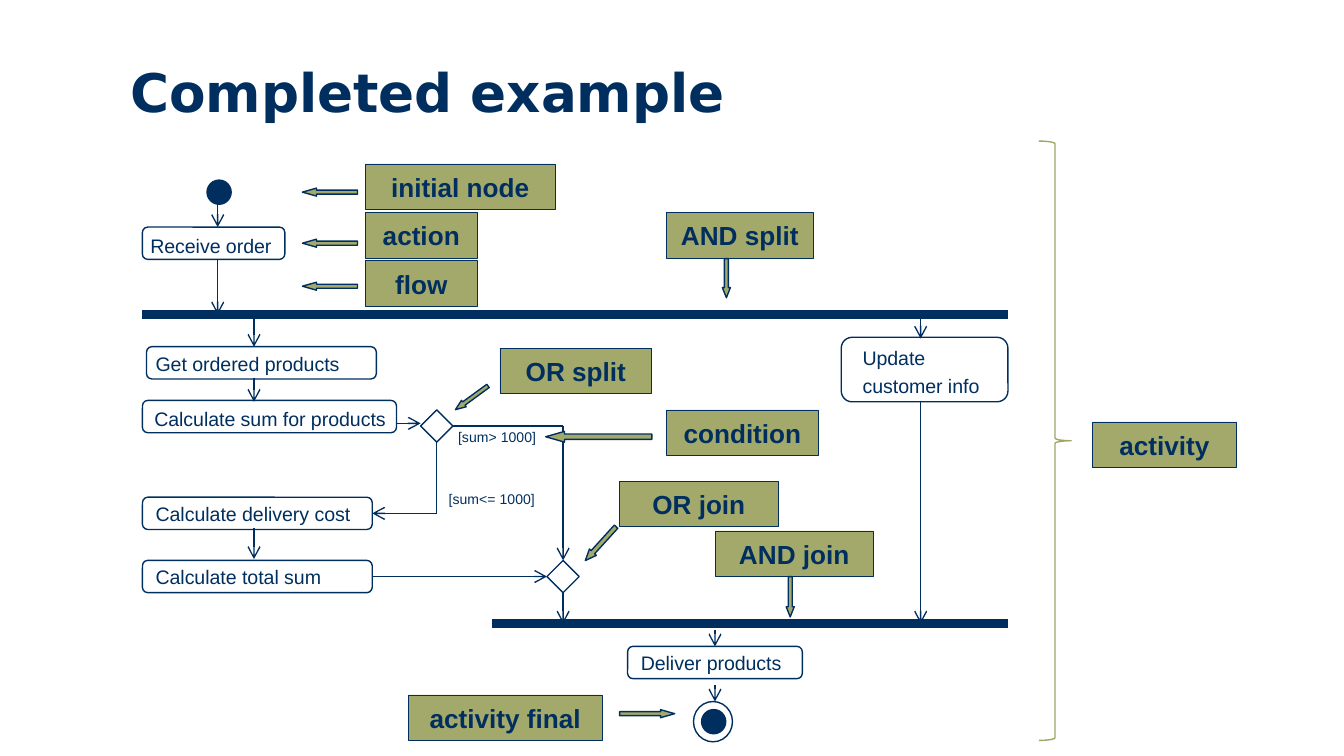
from lxml.etree import SubElement
from pptx import Presentation
from pptx.dml.color import RGBColor
from pptx.enum.shapes import MSO_CONNECTOR, MSO_SHAPE as Shape
from pptx.enum.text import MSO_ANCHOR as Anchor, PP_ALIGN as Align
from pptx.oxml.ns import qn
from pptx.util import Inches, Pt

NAVY, OLIVE, BRACE, WHITE = "002F5F", "A3A86B", "A1A667", "FFFFFF"
TOP, LEFT, BOTTOM, RIGHT = range(4)

TITLE = "Completed example"

# Actions: lines, box (left, top, width, height), text (left, top, width), line spacing
ACTIONS = {
    "receive": (["Receive order"], (1.06, 1.69, 1.06, 0.24), (1.02, 1.75, 1.18), 0.6),
    "get": (["Get ordered products"], (1.09, 2.58, 1.71, 0.24), (1.06, 2.6, 1.77), 0.8),
    "sum": (["Calculate sum for products"], (1.06, 2.98, 1.89, 0.24), (1.05, 3.01, 2.24), 0.8),
    "delivery": (["Calculate delivery cost"], (1.06, 3.7, 1.71, 0.24), (1.06, 3.72, 1.71), 0.8),
    "total": (["Calculate total sum"], (1.06, 4.17, 1.71, 0.24), (1.06, 4.19, 1.7), 0.8),
    "update": (["Update", "customer info"], (6.26, 2.51, 1.24, 0.48), (6.32, 2.59, 1.24), 0.6),
    "deliver": (["Deliver products"], (4.67, 4.81, 1.3, 0.24), (4.67, 4.83, 1.3), 0.8),
}
DIAMONDS = {"or split": (3.13, 3.05, 0.24, 0.24), "or join": (4.07, 4.17, 0.24, 0.24)}
CONDITIONS = [("[sum> 1000]", (3.31, 3.14, 0.78, 0.23)),
              ("[sum<= 1000]", (3.24, 3.6, 0.84, 0.23))]
INITIAL_NODE = (1.54, 1.34, 0.18, 0.18)
FINAL_DOT, FINAL_RING = (5.22, 5.28, 0.18, 0.18), (5.16, 5.22, 0.29, 0.3)

# AND bars: left, right, y
BARS = [(1.06, 7.5, 2.34), (3.66, 7.5, 4.64)]

# Flows: start, end, arrowhead, joined start node, joined end node
FLOWS = [
    ((1.62, 1.51), (1.62, 1.69), True, None, None),
    ((1.62, 1.93), (1.62, 2.34), True, None, None),
    ((1.89, 2.34), (1.89, 2.58), True, None, None),
    ((1.89, 2.81), (1.89, 2.99), True, None, None),
    ((1.89, 3.93), (1.89, 4.16), True, None, None),
    ((6.85, 2.34), (6.85, 2.52), True, None, None),
    ((6.85, 2.99), (6.85, 4.64), True, None, None),
    ((2.95, 3.15), (3.13, 3.15), True, None, None),
    ((3.37, 3.17), (4.19, 3.17), False, ("or split", RIGHT), None),
    ((4.19, 3.17), (4.19, 4.17), True, None, ("or join", TOP)),
    ((3.25, 3.29), (3.25, 3.82), False, ("or split", BOTTOM), None),
    ((3.25, 3.82), (2.77, 3.82), True, None, ("delivery", RIGHT)),
    ((2.77, 4.29), (4.07, 4.29), True, ("total", RIGHT), ("or join", LEFT)),
    ((4.19, 4.41), (4.19, 4.64), True, ("or join", BOTTOM), None),
    ((5.32, 4.69), (5.32, 4.81), True, None, ("deliver", TOP)),
    ((5.32, 5.1), (5.32, 5.22), True, None, None),
]

# Legend tags: text, left, top, width
TAG_HEIGHT = 0.34
TAGS = [
    ("initial node", 2.72, 1.22, 1.41), ("action", 2.72, 1.58, 0.83),
    ("flow", 2.72, 1.94, 0.83), ("AND split", 4.96, 1.58, 1.09),
    ("OR join", 4.61, 3.58, 1.18), ("OR split", 3.72, 2.59, 1.13),
    ("AND join", 5.32, 3.95, 1.18), ("activity final", 3.04, 5.17, 1.44),
    ("condition", 4.96, 3.05, 1.13), ("activity", 8.13, 3.14, 1.07),
]
# Legend arrows: box, rotation, head length relative to height
POINTERS = [
    ((2.25, 1.4, 0.41, 0.06), 0, 1.76), ((2.25, 1.78, 0.41, 0.06), 0, 1.76),
    ((2.25, 2.1, 0.41, 0.06), 0, 1.76), ((5.26, 2.04, 0.29, 0.06), 270, 1.26),
    ((4.3, 4.01, 0.34, 0.07), 312.3, 1.2), ((3.36, 2.93, 0.3, 0.06), 323.9, 1.29),
    ((5.73, 4.41, 0.3, 0.06), 270, 1.26), ((4.61, 5.28, 0.41, 0.06), 180, 1.76),
    ((4.06, 3.21, 0.79, 0.08), 0, 1.76),
]
ACTIVITY_BRACE = (7.73, 1.05, 0.24, 4.46)


def color(value):
    return RGBColor.from_string(value)


def add_node(shapes, kind, box, fill=WHITE, line=NAVY, width=0.75):
    shape = shapes.add_shape(kind, *map(Inches, box))
    shape.shadow.inherit = False
    if fill:
        shape.fill.solid()
        shape.fill.fore_color.rgb = color(fill)
    else:
        shape.fill.background()
    shape.line.color.rgb = color(line)
    shape.line.width = Pt(width)
    return shape


def add_run(paragraph, text, size, bold=False, font="Arial"):
    run = paragraph.add_run()
    run.text = text
    run.font.name, run.font.size, run.font.bold = font, Pt(size), bold
    run.font.color.rgb = color(NAVY)


def add_text(lines, box, size, spacing=None, wrap=True):
    frame = slide.shapes.add_textbox(*map(Inches, box)).text_frame
    frame.word_wrap = wrap
    for index, line in enumerate(lines):
        paragraph = frame.add_paragraph() if index else frame.paragraphs[0]
        paragraph.line_spacing = spacing
        if index:
            paragraph.space_before = Pt(7.2)
        add_run(paragraph, line, size)


def add_line(start, end, width=0.75, arrow=False):
    line = slide.shapes.add_connector(MSO_CONNECTOR.STRAIGHT, *map(Inches, start + end))
    line.line.color.rgb = color(NAVY)
    line.line.width = Pt(width)
    properties = line.line._get_or_add_ln()
    if arrow:
        SubElement(properties, qn("a:tailEnd"), type="arrow")
    SubElement(properties.getparent(), qn("a:effectLst"))
    return line


# Widescreen slide, 16:9
presentation = Presentation()
presentation.slide_width = Inches(10)
presentation.slide_height = presentation.slide_width * 9 // 16
slide = presentation.slides.add_slide(presentation.slide_layouts[5])

# Title
title = slide.shapes.title
title.left, title.top, title.width, title.height = map(Inches, (0.87, 0.39, 7.49, 0.65))
title.text_frame.vertical_anchor = Anchor.TOP
heading = title.text_frame.paragraphs[0]
heading.alignment = Align.LEFT
add_run(heading, TITLE, 28.5, True, "DejaVu Sans")

# Activity nodes
nodes = {}
for name, (lines, box, text_box, spacing) in ACTIONS.items():
    nodes[name] = add_node(slide.shapes, Shape.ROUNDED_RECTANGLE, box)
for name, box in DIAMONDS.items():
    nodes[name] = add_node(slide.shapes, Shape.DIAMOND, box)
add_node(slide.shapes, Shape.OVAL, INITIAL_NODE, NAVY)
final_node = slide.shapes.add_group_shape()
add_node(final_node.shapes, Shape.OVAL, FINAL_DOT, NAVY)
add_node(final_node.shapes, Shape.OVAL, FINAL_RING, None)

# Bars and flows
for left, right, y in BARS:
    add_line((left, y), (right, y), 4.5)
for start, end, arrow, source, target in FLOWS:
    flow = add_line(start, end, arrow=arrow)
    if source:
        flow.begin_connect(nodes[source[0]], source[1])
    if target:
        flow.end_connect(nodes[target[0]], target[1])

# Action names and conditions
for lines, box, (left, top, width), spacing in ACTIONS.values():
    height = 0.1 + 0.17 * spacing * (2 * len(lines) - 1)
    add_text(lines, (left, top, width, height), 10.5, spacing)
for text, box in CONDITIONS:
    add_text([text], box, 7.5, wrap=False)

# Legend
for text, left, top, width in TAGS:
    tag = add_node(slide.shapes, Shape.RECTANGLE, (left, top, width, TAG_HEIGHT), OLIVE, width=0.25)
    tag.text_frame.vertical_anchor = Anchor.MIDDLE
    paragraph = tag.text_frame.paragraphs[0]
    paragraph.alignment = Align.CENTER
    add_run(paragraph, text, 14, True)
for box, rotation, head in POINTERS:
    pointer = add_node(slide.shapes, Shape.LEFT_ARROW, box, OLIVE)
    pointer.rotation = rotation
    pointer.adjustments[1] = head
add_node(slide.shapes, Shape.RIGHT_BRACE, ACTIVITY_BRACE, None, BRACE)

presentation.save("out.pptx")
